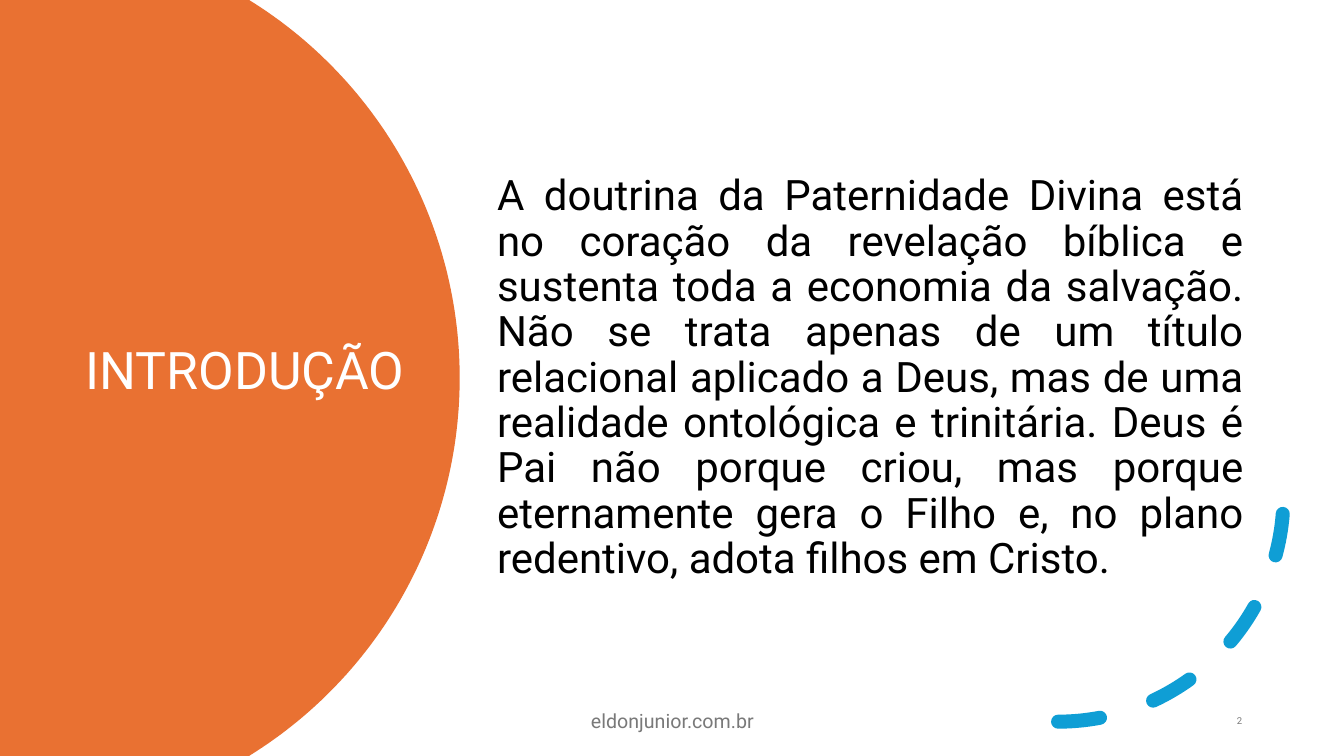
import math
from pptx import Presentation
from pptx import util as u
from pptx.dml import color
from pptx.enum import dml, shapes, text

PX = 9144


def rgb(code):
    return color.RGBColor.from_string(code)


class Deck:
    font = "Roboto"
    orange, blue, gray = "E97132", "0F9ED5", "797979"

    def __init__(self, wide, high):
        self.prs = Presentation()
        self.prs.slide_width = wide * PX
        self.prs.slide_height = high * PX
        self.slide = self.prs.slides.add_slide(self.prs.slide_layouts[6])
        self.items = self.slide.shapes

    def label(self, box, words, size, tint, align="LEFT", lead=1.0, inset=(10, 5)):
        frame = self.items.add_textbox(*[n * PX for n in box]).text_frame
        frame.word_wrap = True
        frame.auto_size = text.MSO_AUTO_SIZE.NONE
        frame.vertical_anchor = text.MSO_ANCHOR.MIDDLE
        frame.margin_left = frame.margin_right = inset[0] * PX
        frame.margin_top = frame.margin_bottom = inset[1] * PX
        frame.text = words
        par = frame.paragraphs[0]
        par.alignment = text.PP_ALIGN[align]
        par.line_spacing = lead
        for run in par.runs:
            run.font.name = self.font
            run.font.size = u.Pt(size)
            run.font.color.rgb = rgb(tint)

    def disc(self, mid, rad, high, tint, steps=120):
        half = math.asin(high / 2 / rad)
        turns = [half * (2 * i / steps - 1) for i in range(steps + 1)]
        rim = [((mid + rad * math.cos(a)) * PX,
                (high / 2 + rad * math.sin(a)) * PX) for a in turns]
        pen = self.items.build_freeform(0, 0)
        pen.add_line_segments(rim + [(0, high * PX)], close=True)
        form = pen.convert_to_shape()
        form.shadow.inherit = False
        form.fill.solid()
        form.fill.fore_color.rgb = rgb(tint)
        form.line.fill.background()

    def arc(self, box, tint, width):
        kind = shapes.MSO_SHAPE.ARC
        form = self.items.add_shape(kind, *[n * PX for n in box])
        form.shadow.inherit = False
        form.fill.background()
        form.line.color.rgb = rgb(tint)
        form.line.width = u.Pt(width)
        form.line.dash_style = dml.MSO_LINE.DASH
        prop = form.element.spPr
        prop.xfrm.set("flipV", "1")
        prop.ln.set("cap", "rnd")

    def save(self):
        self.prs.save("out.pptx")


def main():
    deck = Deck(1333, 750)
    deck.disc(15, 441, 750, deck.orange)
    deck.label((75, 126, 350, 488), "INTRODUÇÃO", 37, "FFFFFF", lead=0.9)
    deck.arc((826, 269, 447, 447), deck.blue, 10)
    body = (
        "A doutrina da Paternidade Divina está no coração da revelação bíblica "
        "e sustenta toda a economia da salvação. Não se trata apenas de um "
        "título relacional aplicado a Deus, mas de uma realidade ontológica e "
        "trinitária. Deus é Pai não porque criou, mas porque eternamente gera "
        "o Filho e, no plano redentivo, adota filhos em Cristo."
    )
    deck.label((486, 70, 755, 611), body, 30, "000000", "JUSTIFY", 0.9, (7, 4))
    deck.label((942, 695, 300, 40), "2", 6.8, deck.gray, "RIGHT")
    deck.label((442, 695, 450, 40), "eldonjunior.com.br", 14, deck.gray, "CENTER")
    deck.save()


if __name__ == "__main__":
    main()
